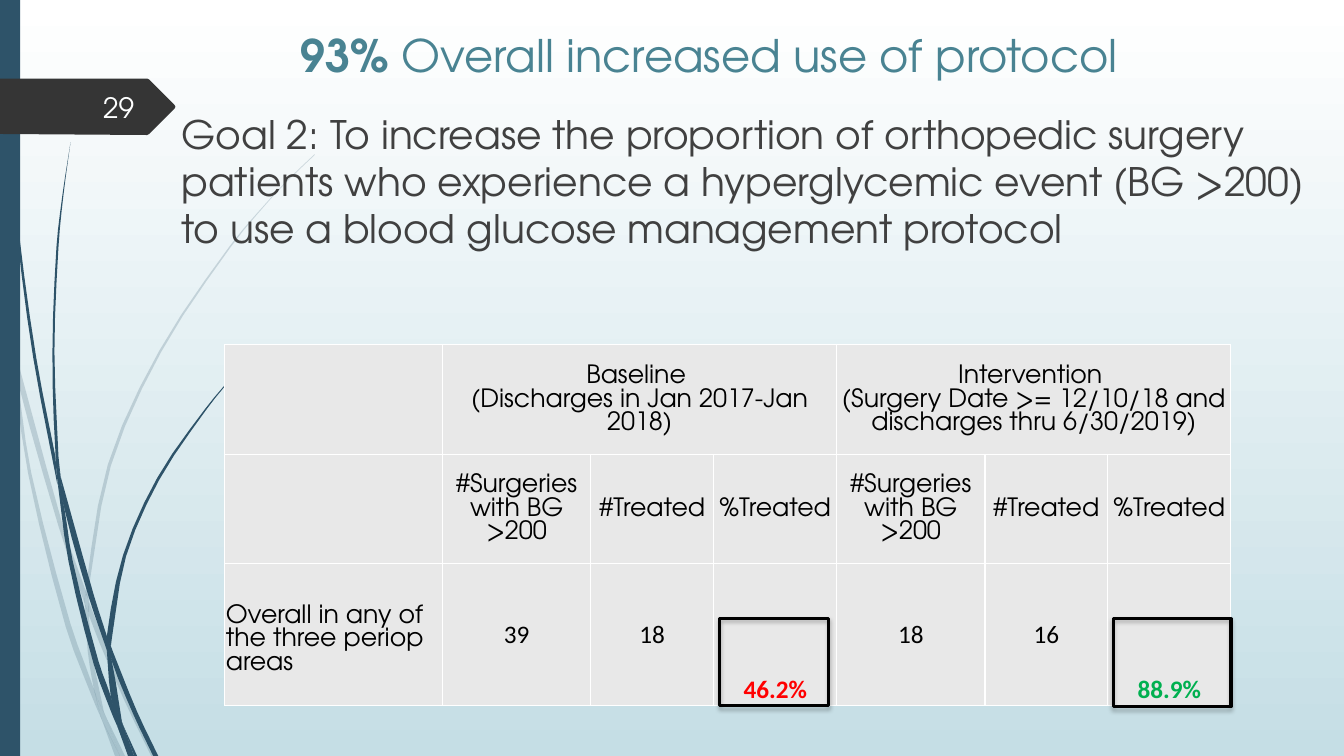
import math

from lxml import etree
from pptx import Presentation
from pptx import util as u
from pptx.dml.color import RGBColor
from pptx.enum import shapes, text
from pptx.oxml import ns

FAINT_STRANDS = [
    ([(0, 2.82), (0.09, 3.22), (0.11, 3.5)], [(0.1, 3.44), (0, 2.99)]),
    ([(0.14, 3.45), (0.17, 3.76), (0.58, 5.22), (0.84, 5.99)],
     [(0.85, 5.86), (0.62, 5.2), (0.14, 3.45)]),
    ([(0.88, 5.96), (0.88, 6.1), (1.23, 6.94), (1.5, 7.5)],
     [(1.55, 7.5), (1.27, 6.92), (0.92, 6.07), (0.88, 5.96)]),
    ([(1.05, 7.11), (1.19, 7.5)], [(1.24, 7.5), (1.05, 7.11)]),
    ([(0.11, 3.5), (0.28, 4.7), (0.65, 6.21), (0.92, 6.93), (1.01, 7.14)],
     [(0.99, 7.07), (0.93, 6.83), (0.7, 6.19), (0.31, 4.69), (0.17, 3.76), (0.11, 3.5)]),
    ([(0.84, 5.99), (0.87, 6.46), (0.93, 6.83), (0.96, 6.92), (1.05, 7.11)],
     [(1.03, 7.06), (0.91, 6.46), (0.88, 6.1), (0.84, 5.99)]),
    ([(3.12, 1.53), (2.89, 1.75), (2.68, 1.97), (2.28, 2.44), (1.58, 3.48),
      (1.07, 4.61), (0.85, 5.86), (0.88, 5.96)],
     [(0.88, 5.84), (1.1, 4.62), (1.6, 3.49), (2.29, 2.45), (2.68, 1.98),
      (2.9, 1.75), (3.12, 1.54)]),
    ([(1.01, 7.14), (1.14, 7.5)], [(1.19, 7.5), (1.01, 7.14)]),
    ([(0.85, 5.86), (0.84, 5.99), (0.88, 6.08)], [(0.88, 6.1), (0.88, 5.96)]),
    ([(0.93, 6.83), (0.99, 7.07), (1.01, 7.14), (1.19, 7.5)],
     [(1.05, 7.11), (0.96, 6.92)]),
]
DARK_STRANDS = [
    ([(0.03, 0), (0.04, 0.48), (0.07, 1.1), (0.17, 2.33), (0.33, 3.55), (0.57, 4.81)],
     [(0.55, 4.53), (0.36, 3.55), (0.19, 2.32), (0.08, 1.09), (0.05, 0.48), (0.04, 0)]),
    ([(0.6, 4.72), (0.64, 5.05), (0.88, 5.92), (1.06, 6.45)],
     [(1.06, 6.31), (0.93, 5.9), (0.6, 4.72)]),
    ([(1.1, 6.41), (1.11, 6.56), (1.32, 7.08), (1.52, 7.5)],
     [(1.57, 7.5), (1.36, 7.06), (1.13, 6.49), (1.1, 6.41)]),
    ([(0.57, 4.77), (0.68, 5.57), (0.93, 6.59), (1.11, 7.08), (1.17, 7.22)],
     [(1.16, 7.17), (1.1, 6.91), (0.98, 6.57), (0.72, 5.56), (0.64, 5.05), (0.57, 4.77)]),
    ([(0.7, 1.41), (0.62, 1.93), (0.56, 2.45), (0.52, 3.49), (0.55, 4.49), (0.6, 4.72)],
     [(0.58, 4.53), (0.54, 3.49), (0.58, 2.45), (0.63, 1.93), (0.7, 1.41)]),
    ([(1.22, 7.19), (1.33, 7.5)], [(1.36, 7.5), (1.22, 7.19)]),
    ([(0.55, 4.49), (0.57, 4.77), (0.64, 5.05)], [(0.6, 4.72), (0.55, 4.49)]),
    ([(2.6, 3.44), (2.45, 3.58), (2.31, 3.73), (2.04, 4.05), (1.56, 4.74),
      (1.22, 5.51), (1.06, 6.31), (1.1, 6.41)],
     [(1.11, 6.33), (1.25, 5.52), (1.58, 4.76), (2.05, 4.06), (2.31, 3.74),
      (2.45, 3.59), (2.61, 3.44)]),
    ([(1.17, 7.22), (1.27, 7.5)], [(1.31, 7.5), (1.17, 7.22)]),
    ([(1.06, 6.45), (1.1, 6.91), (1.16, 7.06), (1.22, 7.19)],
     [(1.21, 7.16), (1.11, 6.56), (1.06, 6.45)]),
    ([(1.06, 6.31), (1.06, 6.45), (1.11, 6.56)], [(1.1, 6.41), (1.06, 6.31)]),
    ([(1.1, 6.91), (1.17, 7.22), (1.3, 7.5)], [(1.33, 7.5), (1.22, 7.19), (1.1, 6.91)]),
]
NAVY, BLACK, FONT = "2E5369", "000000", "TeX Gyre Adventor"
MIDDLE, BOTTOM = text.MSO_ANCHOR.MIDDLE, text.MSO_ANCHOR.BOTTOM
LEFT, CENTER, RIGHT = text.PP_ALIGN.LEFT, text.PP_ALIGN.CENTER, text.PP_ALIGN.RIGHT


def rgb(value):
    return RGBColor.from_string(value)


def smooth(points, steps=3):
    """Return points along a cubic curve that passes through the given ones."""
    last = len(points) - 1
    angles = []
    for i in range(last + 1):
        (x0, y0), (x1, y1) = points[max(i - 1, 0)], points[min(i + 1, last)]
        angles.append(math.atan2(y1 - y0, x1 - x0))
    curve = [points[0]]
    for i in range(last):
        a, d = points[i], points[i + 1]
        reach = math.dist(a, d) / 3
        b = (a[0] + reach * math.cos(angles[i]), a[1] + reach * math.sin(angles[i]))
        c = (d[0] - reach * math.cos(angles[i + 1]), d[1] - reach * math.sin(angles[i + 1]))
        for step in range(1, steps + 1):
            t = step / steps
            weights = ((1 - t) ** 3, 3 * t * (1 - t) ** 2, 3 * t * t * (1 - t), t ** 3)
            curve.append(tuple(sum(w * p[k] for w, p in zip(weights, (a, b, c, d)))
                               for k in (0, 1)))
    return curve


def add_xml(parent, name, **attributes):
    return etree.SubElement(parent, ns.qn(name), attributes)


class SlideBuilder:
    def __init__(self, page):
        self.page = page

    def gradient(self, top, bottom):
        fill = self.page.background.fill
        fill.gradient()
        fill.gradient_angle = 270
        for stop, color in zip(fill.gradient_stops, (top, bottom)):
            stop.color.rgb = rgb(color)

    def backdrop(self, shape, color):
        """Paint a shape plainly and hand it over to the slide layout."""
        shape.shadow.inherit = False
        shape.fill.solid()
        shape.fill.fore_color.rgb = rgb(color)
        shape.line.fill.background()
        layout = self.page.slide_layout.shapes
        shape.element.nvSpPr.cNvPr.set("id", str(len(layout) + 10))
        layout.element.append(shape.element)

    def outline(self, points, color, alpha=None):
        start, *rest = [(u.Inches(x), u.Inches(y)) for x, y in points]
        builder = self.page.shapes.build_freeform(*start)
        builder.add_line_segments(rest, close=True)
        shape = builder.convert_to_shape()
        self.backdrop(shape, color)
        if alpha:
            tint = shape.element.spPr.find(".//" + ns.qn("a:srgbClr"))
            add_xml(tint, "a:alpha", val=str(alpha * 1000))

    def rectangle(self, *place):
        return self.page.shapes.add_shape(
            shapes.MSO_SHAPE.RECTANGLE, *map(u.Inches, place))

    def frame(self, *place):
        """Draw an unfilled black box with a soft shadow."""
        box = self.rectangle(*place)
        box.shadow.inherit = False
        box.fill.background()
        box.line.color.rgb = rgb(BLACK)
        box.line.width = u.Pt(2.25)
        effects = box.element.spPr.find(ns.qn("a:effectLst"))
        shadow = add_xml(effects, "a:outerShdw", blurRad=str(u.Pt(3)),
                         dist=str(u.Pt(2)), dir="5400000", rotWithShape="0")
        add_xml(add_xml(shadow, "a:srgbClr", val=BLACK), "a:alpha", val="25000")

    def style(self, para, size, color, align=LEFT, font=FONT, bold=None):
        para.alignment = align
        para.font.size, para.font.name, para.font.bold = u.Pt(size), font, bold
        para.font.color.rgb = rgb(color)

    def place(self, holder, left, top, width, height):
        """Move a placeholder and return its first paragraph."""
        holder.left, holder.top = u.Inches(left), u.Inches(top)
        holder.width, holder.height = u.Inches(width), u.Inches(height)
        holder.text_frame.auto_size = text.MSO_AUTO_SIZE.NONE
        return holder.text_frame.paragraphs[0]

    def title(self, strong, rest, *place):
        para = self.place(self.page.shapes.title, *place)
        for words, bold in ((strong, True), (rest, False)):
            span = para.add_run()
            span.text, span.font.bold = words, bold
        self.style(para, 32, "498392", CENTER)

    def body(self, words, *place):
        para = self.place(self.page.placeholders[1], *place)
        para.text = words
        self.style(para, 28, "404040")
        para.space_before = u.Pt(10)
        properties = para._p.get_or_add_pPr()
        properties.set("marL", "0")
        properties.set("indent", "0")
        properties.insert_element_before(
            etree.Element(ns.qn("a:buNone")), "a:tabLst", "a:defRPr", "a:extLst")

    def label(self, words, *place):
        box = self.page.shapes.add_textbox(*map(u.Inches, place))
        box.text_frame.word_wrap = True
        box.text_frame.vertical_anchor = MIDDLE
        para = box.text_frame.paragraphs[0]
        para.text = words
        self.style(para, 20, "FEFFFF", RIGHT)

    def cell(self, cell, words, anchor=MIDDLE, bottom=0, **style):
        cell.fill.solid()
        cell.fill.fore_color.rgb = rgb("E8E8E8")
        cell.margin_left = cell.margin_right = cell.margin_top = u.Inches(0.01)
        cell.margin_bottom = u.Inches(bottom)
        cell.vertical_anchor = anchor
        para = cell.text_frame.paragraphs[0]
        para.text = words
        self.style(para, **{"size": 18, "color": BLACK, "align": CENTER, **style})
        properties = cell._tc.get_or_add_tcPr()
        for index, side in enumerate(("a:lnL", "a:lnR", "a:lnT", "a:lnB")):
            border = etree.Element(ns.qn(side), w=str(u.Pt(1)))
            add_xml(add_xml(border, "a:solidFill"), "a:srgbClr", val="FFFFFF")
            properties.insert(index, border)

    def table(self, rows, widths, heights, left, top):
        table = self.page.shapes.add_table(
            len(heights), len(widths), u.Inches(left), u.Inches(top),
            u.Inches(sum(widths)), u.Inches(sum(heights))).table
        table.first_row = table.horz_banding = False
        for column, width in zip(table.columns, widths):
            column.width = u.Inches(width)
        for r, (row, height) in enumerate(zip(rows, heights)):
            table.rows[r].height = u.Inches(height)
            for c, (words, style) in enumerate(row):
                self.cell(table.cell(r, c), words, **style)
        for start in (1, 4):
            table.cell(0, start).merge(table.cell(0, start + 2))


def main():
    deck = Presentation()
    deck.slide_width, deck.slide_height = u.Inches(13.33), u.Inches(7.5)
    slide = SlideBuilder(deck.slides.add_slide(deck.slide_layouts[1]))
    slide.gradient("FFFFFF", "C5DEE5")
    for strands, alpha in ((FAINT_STRANDS, 20), (DARK_STRANDS, None)):
        for edge, return_edge in strands:
            slide.outline(smooth(edge) + smooth(return_edge), NAVY, alpha)
    slide.backdrop(slide.rectangle(0, 0, 0.2, 7.5), NAVY)
    slide.outline([(0, 0.78), (1.46, 0.78), (1.48, 0.79), (1.73, 1.04), (1.74, 1.06),
                   (1.73, 1.08), (1.48, 1.33), (1.46, 1.34), (0, 1.33)], "353535")
    slide.body("Goal 2: To increase the proportion of orthopedic surgery patients who "
               "experience a hyperglycemic event (BG >200) to use a blood glucose "
               "management protocol", 1.7, 1.04, 11.53, 2.36)
    slide.label("29", 0.58, 0.86, 0.85, 0.4)
    slide.title("93%", " Overall increased use of protocol", 2.66, 0.22, 8.75, 0.64)

    blank = ("", {})
    number = {"font": "Calibri"}
    percent = {**number, "anchor": BOTTOM, "bold": True}
    measures = [(words, {}) for words in ("#Surgeries with BG >200", "#Treated", "%Treated")]
    rows = [
        [blank, ("Baseline \v(Discharges in Jan 2017-Jan 2018)", {}), blank, blank,
         ("Intervention \v(Surgery Date >= 12/10/18 and discharges thru 6/30/2019)", {}),
         blank, blank],
        [blank] + measures * 2,
        [("Overall in any of the three periop areas",
          {"anchor": BOTTOM, "bottom": 0.3, "align": LEFT}),
         ("39", number), ("18", number), ("46.2%", {**percent, "color": "FF0000"}),
         ("18", number), ("16", number), ("88.9%", {**percent, "color": "00B050"})],
    ]
    slide.table(rows, [2.16] + [1.47, 1.22, 1.22] * 2, [1.09, 1.08, 1.41], 2.23, 3.42)
    slide.frame(7.14, 6.14, 1.08, 0.86)
    slide.frame(11.04, 6.14, 1.17, 0.87)
    deck.save("out.pptx")


if __name__ == "__main__":
    main()
